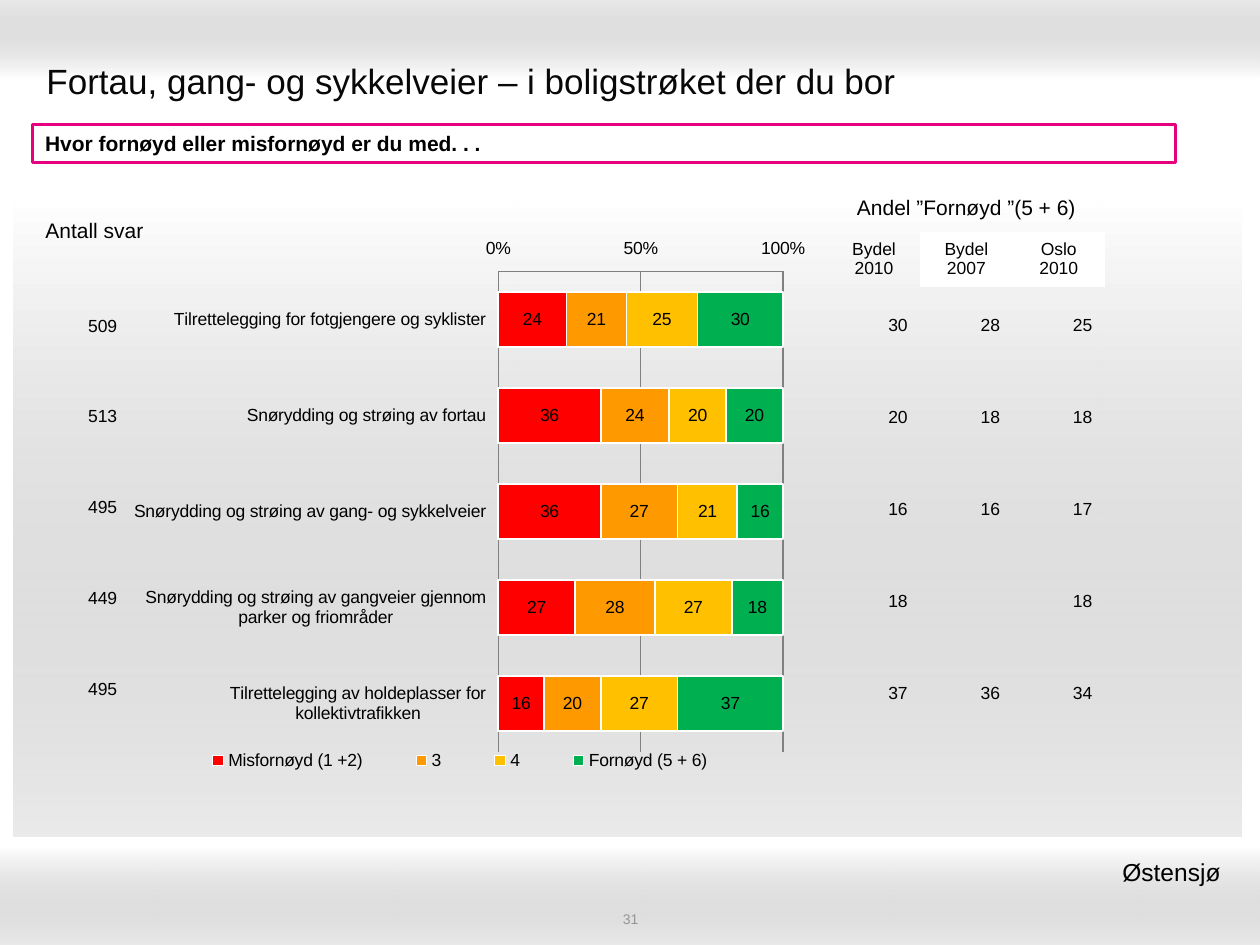
from lxml import etree
from pptx import Presentation
from pptx.chart.data import CategoryChartData
from pptx.dml.color import RGBColor
from pptx.enum.chart import XL_CHART_TYPE as ChartType, XL_LEGEND_POSITION as LegendPosition
from pptx.enum.chart import XL_TICK_LABEL_POSITION as LabelPosition, XL_TICK_MARK as TickMark
from pptx.enum.shapes import MSO_SHAPE as ShapeType
from pptx.enum.text import MSO_ANCHOR as Anchor, PP_ALIGN as Align
from pptx.oxml import parse_xml
from pptx.oxml.ns import nsdecls, qn
from pptx.util import Inches, Pt

color = RGBColor.from_string


def write_text(frame, text, size, align=Align.LEFT, hex_color="000000", bold=False):
    frame.word_wrap = True
    for index, line in enumerate(text.split("\n")):
        paragraph = frame.paragraphs[0] if index == 0 else frame.add_paragraph()
        paragraph.alignment = align
        run = paragraph.add_run()
        run.text = line
        for name, value in {"name": "Arial", "size": Pt(size), "bold": bold}.items():
            setattr(run.font, name, value)
        run.font.color.rgb = color(hex_color)


def add_table(box, rows, row_heights, size, align):
    table = slide.shapes.add_table(len(rows), len(rows[0]), *map(Inches, box)).table
    table.first_row = table.horz_banding = False
    style = table._tbl.tblPr.find(qn("a:tableStyleId"))
    style.text = "{2D5ABB26-0587-4C30-8999-92F81FD0307C}"
    for row, height in zip(table.rows, row_heights):
        row.height = Inches(height)
    for row_index, values in enumerate(rows):
        for column_index, value in enumerate(values):
            cell = table.cell(row_index, column_index)
            cell.fill.background()
            cell.vertical_anchor = Anchor.MIDDLE
            if value:
                write_text(cell.text_frame, value, size, align)
    return table


presentation = Presentation()
presentation.slide_width = Inches(10)
presentation.slide_height = Inches(7.5)
slide = presentation.slides.add_slide(presentation.slide_layouts[6])

bands = [((0, 0, 10, 0.62), 270), ((0, 6.72, 10, 0.78), 90), ((0.11, 1.56, 9.74, 5.08), 90)]
for box, angle in bands:
    shape = slide.shapes.add_shape(ShapeType.RECTANGLE, *map(Inches, box))
    shape.shadow.inherit = False
    shape.line.fill.background()
    gradient = parse_xml(
        f'<a:gradFill {nsdecls("a")} rotWithShape="1"><a:gsLst>'
        '<a:gs pos="0"><a:srgbClr val="FFFFFF"/></a:gs>'
        '<a:gs pos="100000"><a:srgbClr val="999999"><a:alpha val="20000"/></a:srgbClr></a:gs>'
        f'</a:gsLst><a:lin ang="{angle * 60000}" scaled="1"/></a:gradFill>'
    )
    shape._element.spPr.find(qn("a:prstGeom")).addnext(gradient)

texts = [
    ((0.27, 0.36, 9.45, 0.55), "Fortau, gang- og sykkelveier – i boligstrøket der du bor",
     20, Align.LEFT, "080808", Anchor.MIDDLE),
    ((3.42, 7.22, 3.17, 0.14), "31", 8, Align.CENTER, "969696", Anchor.MIDDLE),
    ((6.1, 6.75, 3.74, 0.57), "Østensjø ", 14, Align.RIGHT, "000000", Anchor.TOP),
]
for box, text, size, align, hex_color, anchor in texts:
    frame = slide.shapes.add_textbox(*map(Inches, box)).text_frame
    frame.vertical_anchor = anchor
    write_text(frame, text, size, align, hex_color)

question = slide.shapes.add_shape(
    ShapeType.RECTANGLE, Inches(0.26), Inches(0.99), Inches(9.07), Inches(0.3))
question.shadow.inherit = False
question.fill.solid()
question.fill.fore_color.rgb = color("FFFFFF")
question.line.color.rgb = color("E7007E")
question.line.width = Pt(2)
question.text_frame.vertical_anchor = Anchor.MIDDLE
write_text(question.text_frame, "Hvor fornøyd eller misfornøyd er du med. . .", 12, bold=True)

chart_data = CategoryChartData(number_format="0")
chart_data.categories = [
    "Tilrettelegging for fotgjengere og syklister",
    "Snørydding og strøing av fortau",
    "Snørydding og strøing av gang- og sykkelveier",
    "Snørydding og strøing av gangveier gjennom parker og friområder",
    "Tilrettelegging av holdeplasser for kollektivtrafikken",
]
answers = [
    ("Misfornøyd (1 +2)", (24, 36, 36, 27, 16), "FF0000"),
    ("3", (21, 24, 27, 28, 20), "FF9900"),
    ("4", (25, 20, 21, 27, 27), "FFC000"),
    ("Fornøyd (5 + 6)", (30, 20, 16, 18, 37), "00B050"),
]
for name, values, hex_color in answers:
    chart_data.add_series(name, values)
chart = slide.shapes.add_chart(
    ChartType.BAR_STACKED, Inches(0.98), Inches(1.79), Inches(5.51), Inches(4.54), chart_data).chart
chart.has_title = False
chart.font.name = "Arial"
chart.font.size = Pt(10)
chart.font.color.rgb = color("000000")

plot = chart.plots[0]
plot.vary_by_categories = False
plot.gap_width = 75
plot.overlap = 100
for series, (name, values, hex_color) in zip(plot.series, answers):
    series.format.fill.solid()
    series.format.fill.fore_color.rgb = color(hex_color)
    series.format.line.color.rgb = color("FFFFFF")
    series.format.line.width = Pt(1)
    labels = series.data_labels
    for key, value in {"show_value": True, "number_format": "0",
                       "number_format_is_linked": False}.items():
        setattr(labels, key, value)

category_axis, value_axis = chart.category_axis, chart.value_axis
axis_formats = [
    (category_axis, {"reverse_order": True, "major_tick_mark": TickMark.NONE}),
    (value_axis, {"minimum_scale": 0, "maximum_scale": 100, "major_unit": 50,
                  "has_major_gridlines": True, "major_tick_mark": TickMark.INSIDE}),
]
for axis, formats in axis_formats:
    for key, value in formats.items():
        setattr(axis, key, value)
    axis.minor_tick_mark = TickMark.NONE
    axis.tick_label_position = LabelPosition.LOW
    axis.format.line.color.rgb = color("808080")
value_axis.major_gridlines.format.line.color.rgb = color("808080")
value_axis.tick_labels.number_format = "General\\%"
value_axis.tick_labels.number_format_is_linked = False

chart.has_legend = True
chart.legend.position = LegendPosition.BOTTOM
chart.legend.include_in_layout = False
plot_area = chart._chartSpace.chart.plotArea
for old_layout in plot_area.findall(qn("c:layout")):
    plot_area.remove(old_layout)
legend_position = chart.legend._element.find(qn("c:legendPos"))
layouts = [
    ("inner", (0.54, 0.08, 0.41, 0.84), lambda layout: plot_area.insert(0, layout)),
    (None, (0.06, 0.91, 0.85, 0.05), legend_position.addnext),
]
for target, fractions, place in layouts:
    layout = etree.Element(qn("c:layout"))
    manual = etree.SubElement(layout, qn("c:manualLayout"))
    settings = [("layoutTarget", target)] if target else []
    settings += [("xMode", "edge"), ("yMode", "edge"), *zip("xywh", map(str, fractions))]
    for tag, value in settings:
        etree.SubElement(manual, qn(f"c:{tag}"), val=value)
    place(layout)

satisfied = [("30", "28", "25"), ("20", "18", "18"), ("16", "16", "17"),
             ("18", "", "18"), ("37", "36", "34")]
add_table((6.57, 2.22, 2.2, 3.66), satisfied, [0.73] * 5, 10, Align.RIGHT)

headings = [("", "", ""), ("Bydel\n2010", "Bydel\n2007", "Oslo\n2010")]
heading_table = add_table((6.57, 1.47, 2.2, 0.8), headings, [0.37, 0.39], 10, Align.CENTER)
heading_table.cell(0, 0).merge(heading_table.cell(0, 2))
write_text(heading_table.cell(0, 0).text_frame, "Andel ”Fornøyd ”(5 + 6)", 12, Align.CENTER)
for column_index in (1, 2):
    fill = heading_table.cell(1, column_index).fill
    fill.solid()
    fill.fore_color.rgb = color("FFFFFF")

counts = [("509",), ("513",), ("495",), ("449",), ("495",)]
add_table((0.51, 2.23, 0.52, 3.61), counts, [0.72] * 5, 10, Align.RIGHT)
add_table((0.04, 1.54, 1.42, 0.59), [("Antall svar",)], [0.59], 12, Align.CENTER)

presentation.save("out.pptx")
